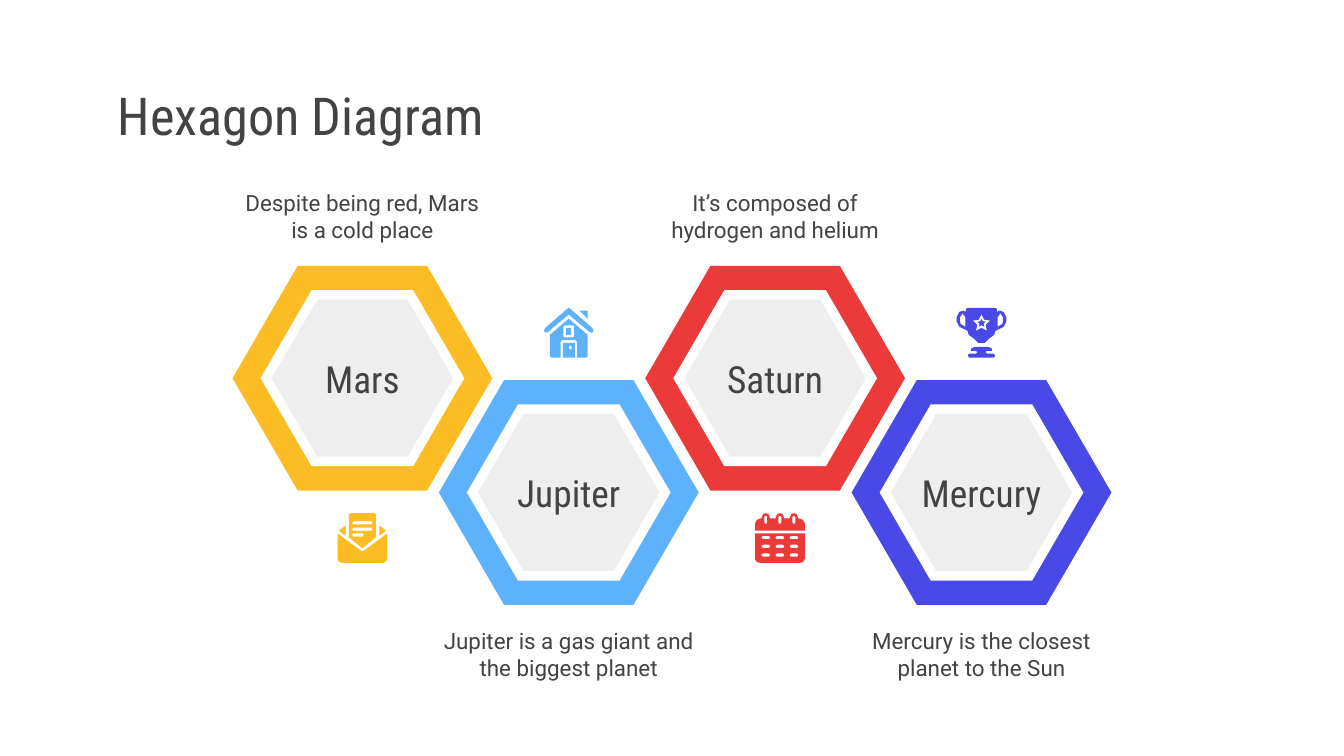
from math import cos, pi, sin

from pptx import Presentation
from pptx.dml.color import RGBColor
from pptx.enum.shapes import MSO_SHAPE
from pptx.enum.text import MSO_ANCHOR, MSO_AUTO_SIZE, PP_ALIGN
from pptx.util import Cm, Pt

GOLD = RGBColor(0xFC, 0xBD, 0x24)
BLUE = RGBColor(0x5E, 0xB2, 0xFC)
RED = RGBColor(0xEC, 0x3A, 0x3B)
INDIGO = RGBColor(0x49, 0x49, 0xE7)
WHITE = RGBColor(0xFF, 0xFF, 0xFF)
PALE = RGBColor(0xEE, 0xEE, 0xEE)
DARK = RGBColor(0x43, 0x43, 0x43)

HEAD = "Roboto Condensed"
BODY = "Roboto"

# Icons are drawn on a square grid of this many units a side.
GRID = 37
ICON = 0.94


def box(left, top, right, bottom, rad=0):
    """Outline of a rectangle, with rounded corners if rad is given."""
    if not rad:
        return [(left, top), (right, top), (right, bottom), (left, bottom)]
    mids = [(right - rad, bottom - rad), (left + rad, bottom - rad),
            (left + rad, top + rad), (right - rad, top + rad)]
    return [(x + rad * cos(turn * pi / 6), y + rad * sin(turn * pi / 6))
            for side, (x, y) in enumerate(mids)
            for turn in range(3 * side, 3 * side + 4)]


def flip(half):
    return [(GRID - x, y) for x, y in reversed(half)]


def both(half):
    """Close a left half with its mirror image."""
    return half + flip(half)


def star(x, y, size):
    return [(x + rad * sin(k * pi / 5), y - rad * cos(k * pi / 5))
            for k in range(10)
            for rad in [size if k % 2 == 0 else size / 2]]


def trophy():
    cup = both([(8, 0), (7, 1), (7, 3), (5, 2), (2, 3), (0, 7), (0, 10),
                (2, 14), (8, 17), (9, 20), (13, 23), (16, 26)])
    ear = [(4.5, 4), (6.5, 7), (6.5, 14), (3, 12), (2.5, 10), (2.5, 7)]
    base = both([(13.5, 29), (11, 30), (10.5, 32), (14.5, 32), (15.5, 33),
                 (14.5, 34), (9.5, 34), (8.5, 35), (8.5, 36), (9.5, 37)])
    return [[cup, ear, flip(ear), star(18.5, 11.5, 6.8)], [base],
            [star(18.5, 11.3, 3.2)]]


def house():
    roof = both([(18.5, 0), (17, 1), (1, 15), (0, 17), (1, 18.5),
                 (3, 18), (18.5, 5)])
    wall = both([(18.5, 8), (4.5, 20), (4.5, 36), (5.5, 37), (12.5, 37),
                 (12.5, 25), (13.5, 24)])
    return [[[(26.5, 2), (32.5, 2), (32.5, 8)]],
            [box(14, 26, 23, 37), box(18.5, 28, 20.5, 31, 1)],
            [box(16.5, 15, 20.5, 20)],
            [roof],
            [wall, box(14.5, 13, 22.5, 22, 1)]]


def letter():
    cover = both([(18.5, 28.5), (17.5, 28), (0, 15), (0, 34), (1, 36),
                  (3, 37)])
    flap = [(6, 9), (1, 13), (6, 17)]
    page = both([(9.5, 0), (8.5, 1), (8.5, 18), (18.5, 26)])
    lines = [box(11, y, right, y + 2.4, 1.2)
             for y, right in [(6, 26), (10.7, 26), (15, 19.5)]]
    return [[cover], [flip(flap)], [flap], [page] + lines]


def diary():
    sheet = both([(0, 15), (0, 34), (1, 36), (3.5, 37)])
    days = [box(x, y, x + 6.4, y + 2.4, 1.2)
            for x in (4.8, 15.3, 25.8) for y in (17, 23.5, 30)]
    rings = (8, 18.5, 29)
    top = [(0, 13), (0, 7.5), (1.5, 5), (4, 4)]
    for x in rings:
        top += [(x - 3, 4), (x - 3, 3), (x - 2, 0.8), (x, 0),
                (x + 2, 0.8), (x + 3, 3), (x + 3, 4)]
    top += flip([(0, 13), (0, 7.5), (1.5, 5), (4, 4)])
    slots = [box(x - 1.1, 2, x + 1.1, 8, 1.1) for x in rings]
    return [[sheet] + days, [top] + slots]


def write(frame, text, font=BODY, size=12, align=PP_ALIGN.CENTER,
          inset=0.25, wrap=True):
    frame.word_wrap = wrap
    frame.auto_size = MSO_AUTO_SIZE.NONE
    frame.vertical_anchor = MSO_ANCHOR.MIDDLE
    frame.margin_left = frame.margin_right = Cm(inset)
    frame.margin_top = frame.margin_bottom = Cm(inset)
    line = frame.paragraphs[0]
    line.alignment = align
    run = line.add_run()
    run.text = text
    run.font.name = font
    run.font.size = Pt(size)
    run.font.color.rgb = DARK


class Deck:
    def __init__(self):
        self.file = Presentation()
        self.file.slide_width = Cm(25.4)
        self.file.slide_height = Cm(14.29)
        self.slide = self.file.slides.add_slide(self.file.slide_layouts[5])
        self.shapes = self.slide.shapes

    def title(self, text):
        head = self.shapes.title
        head.left, head.top = Cm(1.98), Cm(1.5)
        head.width, head.height = Cm(21.46), Cm(1.35)
        write(head.text_frame, text, font=HEAD, size=28, align=PP_ALIGN.LEFT)

    def paint(self, shape, color):
        shape.shadow.inherit = False
        shape.fill.solid()
        shape.fill.fore_color.rgb = color
        shape.line.fill.background()
        return shape

    def hexagon(self, x, y, wide, high, color):
        """Add a hexagon centred on x, y."""
        shape = self.shapes.add_shape(
            MSO_SHAPE.HEXAGON, Cm(x - wide / 2), Cm(y - high / 2),
            Cm(wide), Cm(high))
        shape.adjustments[0] = 0.29
        return self.paint(shape, color)

    def label(self, x, y, text):
        wide, high = 5.23, 1.47
        shape = self.shapes.add_textbox(
            Cm(x - wide / 2), Cm(y - high / 2), Cm(wide), Cm(high))
        write(shape.text_frame, text)
        return shape

    def planet(self, x, y, side, name, text, color):
        """Add a framed name, with its text above (-1) or below (1)."""
        frame = self.hexagon(x, y, 4.91, 4.25, color)
        gap = self.hexagon(x, y, 3.85, 3.33, WHITE)
        core = self.hexagon(x, y, 3.43, 2.97, PALE)
        write(core.text_frame, name, font=HEAD, size=20, inset=0, wrap=False)
        note = self.label(x, y + side * 3.06, text)
        self.shapes.add_group_shape([frame, gap, core, note])

    def icon(self, x, y, parts, color):
        """Add an icon centred on x, y; each part is a list of outlines."""
        def place(outline):
            return [(Cm(x + (h / GRID - 0.5) * ICON),
                     Cm(y + (v / GRID - 0.5) * ICON)) for h, v in outline]

        drawn = []
        for part in parts:
            first, *holes = [place(outline) for outline in part]
            pen = self.shapes.build_freeform(*first[0])
            pen.add_line_segments(first[1:])
            for hole in holes:
                pen.move_to(*hole[0])
                pen.add_line_segments(hole[1:])
            drawn.append(self.paint(pen.convert_to_shape(), color))
        self.shapes.add_group_shape(drawn)


def main():
    deck = Deck()
    deck.title("Hexagon Diagram")
    planets = [
        ("Mars", "Despite being red, Mars is a cold place", GOLD, letter, 0),
        ("Jupiter", "Jupiter is a gas giant and the biggest planet",
         BLUE, house, 0),
        ("Saturn", "It’s composed of hydrogen and helium", RED, diary, 0.09),
        ("Mercury", "Mercury is the closest planet to the Sun",
         INDIGO, trophy, 0),
    ]
    for k, (name, text, color, draw, shift) in enumerate(planets):
        x = 6.85 + 3.9 * k
        y, side = (9.31, 1) if k % 2 else (7.15, -1)
        deck.icon(x + shift, y - side * 3.02, draw(), color)
        deck.planet(x, y, side, name, text, color)
    deck.file.save("out.pptx")


if __name__ == "__main__":
    main()
